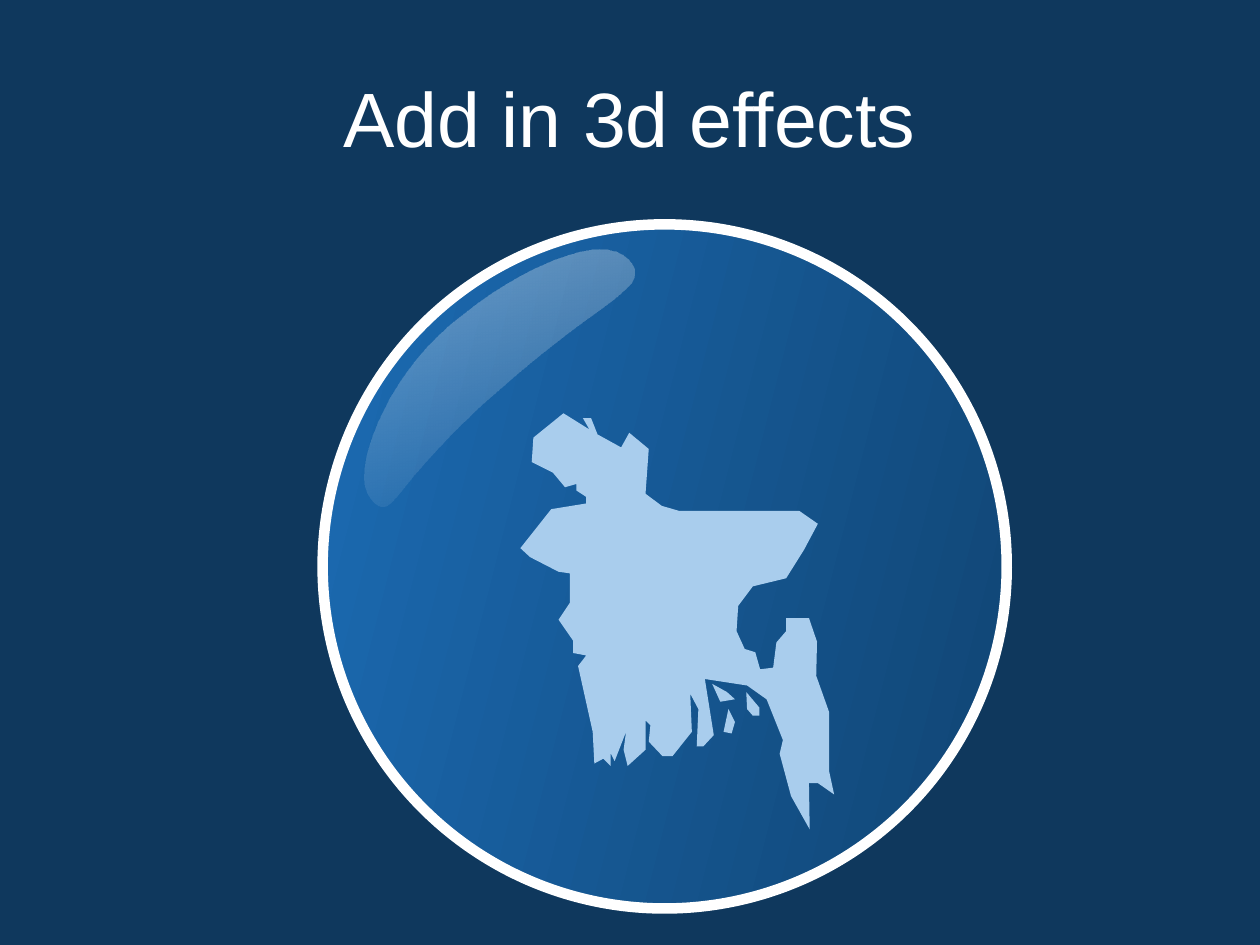
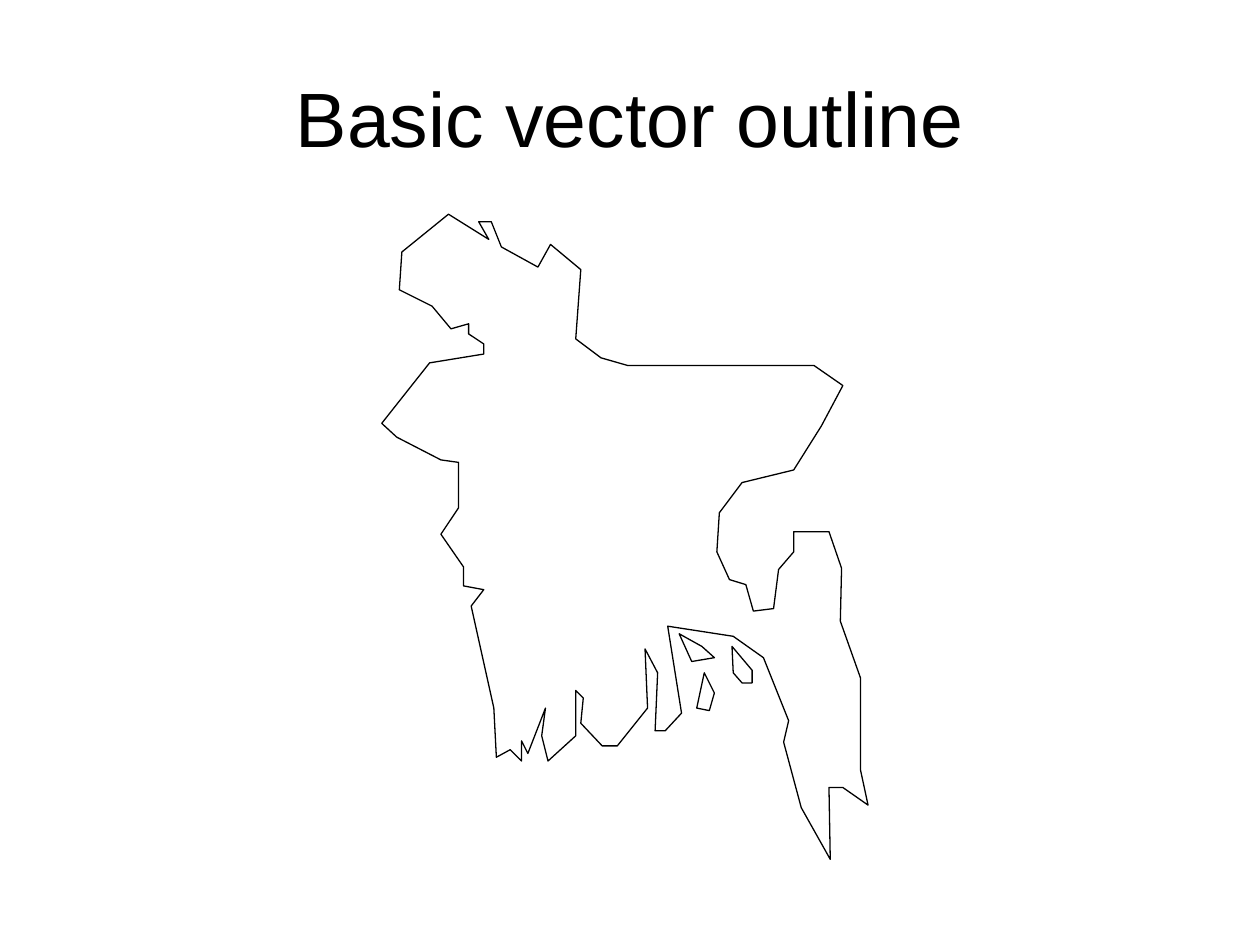
from lxml.etree import SubElement
from pptx import Presentation
from pptx.dml.color import RGBColor
from pptx.enum.shapes import MSO_SHAPE
from pptx.enum.text import MSO_ANCHOR, PP_ALIGN
from pptx.oxml.ns import qn
from pptx.util import Pt

PX = 9144  # one hundredth of an inch
COLORS = {
    "navy": "0F385D",
    "globe_dark": "0E3D67",
    "globe_light": "1E73C0",
    "land": "A9CDED",
    "white": "FFFFFF",
    "black": "000000",
}
TITLE_BOX = (50, 30, 900, 125)
TITLE_FRAME = {"word_wrap": True, "vertical_anchor": MSO_ANCHOR.MIDDLE}
TITLE_FONT = {"name": "Arial", "size": Pt(44)}

MAP_WIDTH = 386
MAINLAND = [
    (91, 431), (89, 392), (71, 311), (81, 298), (65, 295), (65, 280),
    (47, 254), (61, 233), (61, 197), (47, 195), (12, 177), (0, 166),
    (38, 118), (81, 111), (81, 103), (69, 95), (69, 87), (55, 91),
    (40, 73), (14, 60), (16, 30), (53, 0), (85, 20), (77, 6),
    (87, 6), (95, 26), (124, 42), (134, 24), (158, 44), (154, 99),
    (174, 114), (195, 120), (343, 120), (366, 136), (349, 168), (327, 203),
    (286, 213), (268, 237), (266, 268), (276, 290), (289, 294), (295, 315),
    (311, 313), (315, 282), (327, 268), (327, 252), (355, 252), (365, 281),
    (364, 323), (380, 368), (380, 441), (386, 469), (366, 455), (355, 455),
    (356, 512), (333, 471), (319, 419), (323, 402), (303, 352), (279, 335),
    (227, 327), (238, 396), (225, 410), (217, 410), (219, 364), (209, 345),
    (211, 392), (187, 422), (175, 422), (158, 404), (160, 384), (154, 378),
    (154, 414), (132, 434), (127, 414), (130, 392), (116, 428), (111, 418),
    (111, 434), (102, 425),
]
ISLANDS = [
    [(250, 392), (256, 364), (264, 380), (260, 394)],
    [(278, 343), (279, 364), (286, 372), (294, 372), (294, 362)],
    [(264, 352), (246, 355), (236, 333), (254, 343)],
]
GLOSS_START = (117, 128)
GLOSS_FIRST_HANDLE = (30, 205)
# Closing handle and end point of each curve
GLOSS_CURVES = [
    ((36, 233), (18, 213)),
    ((29, 118), (81, 74)),
    ((201, 0), (221, 23)),
    ((204, 50), GLOSS_START),
]


def emu(box):
    return [length * PX for length in box]


def set_solid(fill, color):
    fill.solid()
    fill.fore_color.rgb = RGBColor.from_string(COLORS[color])


def set_gradient(shape, stops, angle):
    """Fill with (position %, colour, opacity %) stops, angle in degrees clockwise."""
    shape.fill.gradient()
    gradient = shape.fill._xPr.find(qn("a:gradFill"))
    gradient.set("rotWithShape", "1")
    for child in list(gradient):
        gradient.remove(child)
    stop_list = SubElement(gradient, qn("a:gsLst"))
    for position, color, opacity in stops:
        stop = SubElement(stop_list, qn("a:gs"), pos=str(position * 1000))
        tint = SubElement(stop, qn("a:srgbClr"), val=COLORS[color])
        SubElement(tint, qn("a:alpha"), val=str(opacity * 1000))
    SubElement(gradient, qn("a:lin"), ang=str(angle * 60000), scaled="0")


def set_line(shape, color=None, width=0):
    shape.shadow.inherit = False
    if color is None:
        shape.line.fill.background()
    else:
        set_solid(shape.line.fill, color)
        shape.line.width = Pt(width)


def add_outline(shapes, points, left, top, zoom=1):
    builder = shapes.build_freeform(*points[0], scale=PX * zoom)
    builder.add_line_segments(points[1:], close=True)
    return builder.convert_to_shape(left * PX, top * PX)


def smooth_points(start, handle, curves):
    """List all curve points; each opening handle mirrors the handle before it."""
    points = [start]
    for closing, end in curves:
        points += [handle, closing, end]
        handle = tuple(2 * e - c for e, c in zip(end, closing))
    return points


def bend(shape):
    """Turn each three straight segments into one cubic curve."""
    segments = list(shape._element.iter(qn("a:lnTo")))
    for first, second, third in zip(*[iter(segments)] * 3):
        curve = first.getparent().makeelement(qn("a:cubicBezTo"))
        first.addprevious(curve)
        for segment in (first, second, third):
            curve.append(segment[0])
            segment.getparent().remove(segment)


def add_map(page, box, fill, line=None, line_width=0):
    left, top, width = box
    group = page.shapes.add_group_shape()
    for points in [MAINLAND, *ISLANDS]:
        land = add_outline(group.shapes, points, left, top, width / MAP_WIDTH)
        set_solid(land.fill, fill)
        set_line(land, line, line_width)


def add_globe(page, box):
    left, top, size = box
    globe = page.shapes.add_shape(MSO_SHAPE.OVAL, *emu((left, top, size, size)))
    globe.rotation = 149.2
    set_gradient(globe, [(0, "globe_dark", 100), (100, "globe_light", 100)], 45)
    set_line(globe, "white", 6)


def add_gloss(page, left, top):
    points = smooth_points(GLOSS_START, GLOSS_FIRST_HANDLE, GLOSS_CURVES)
    gloss = add_outline(page.shapes, points, left, top)
    bend(gloss)
    set_gradient(gloss, [(0, "white", 37), (100, "white", 0)], 74)
    set_line(gloss)


def add_title(page, text, color):
    frame = page.shapes.add_textbox(*emu(TITLE_BOX)).text_frame
    para = frame.paragraphs[0]
    para.alignment = PP_ALIGN.CENTER
    span = para.add_run()
    span.text = text
    set_solid(span.font.fill, color)
    for target, formats in ((frame, TITLE_FRAME), (span.font, TITLE_FONT)):
        for name, value in formats.items():
            setattr(target, name, value)


def add_page(deck, background):
    page = deck.slides.add_slide(deck.slide_layouts[6])
    set_solid(page.background.fill, background)
    return page


def globe_page(deck):
    page = add_page(deck, "navy")
    left, top, size = 256, 178, 543
    add_globe(page, (left, top, size))
    add_title(page, "Add in 3d effects", "white")
    add_gloss(page, left + 21, top + 5)
    add_map(page, (left + 157, top + 150, 249), "land")


def outline_page(deck):
    page = add_page(deck, "white")
    add_title(page, "Basic vector outline", "black")
    add_map(page, (303, 170, MAP_WIDTH), "white", "black", 0.75)


def main():
    deck = Presentation()
    deck.slide_width, deck.slide_height = emu((1000, 750))
    globe_page(deck)
    outline_page(deck)
    deck.save("out.pptx")


if __name__ == "__main__":
    main()
